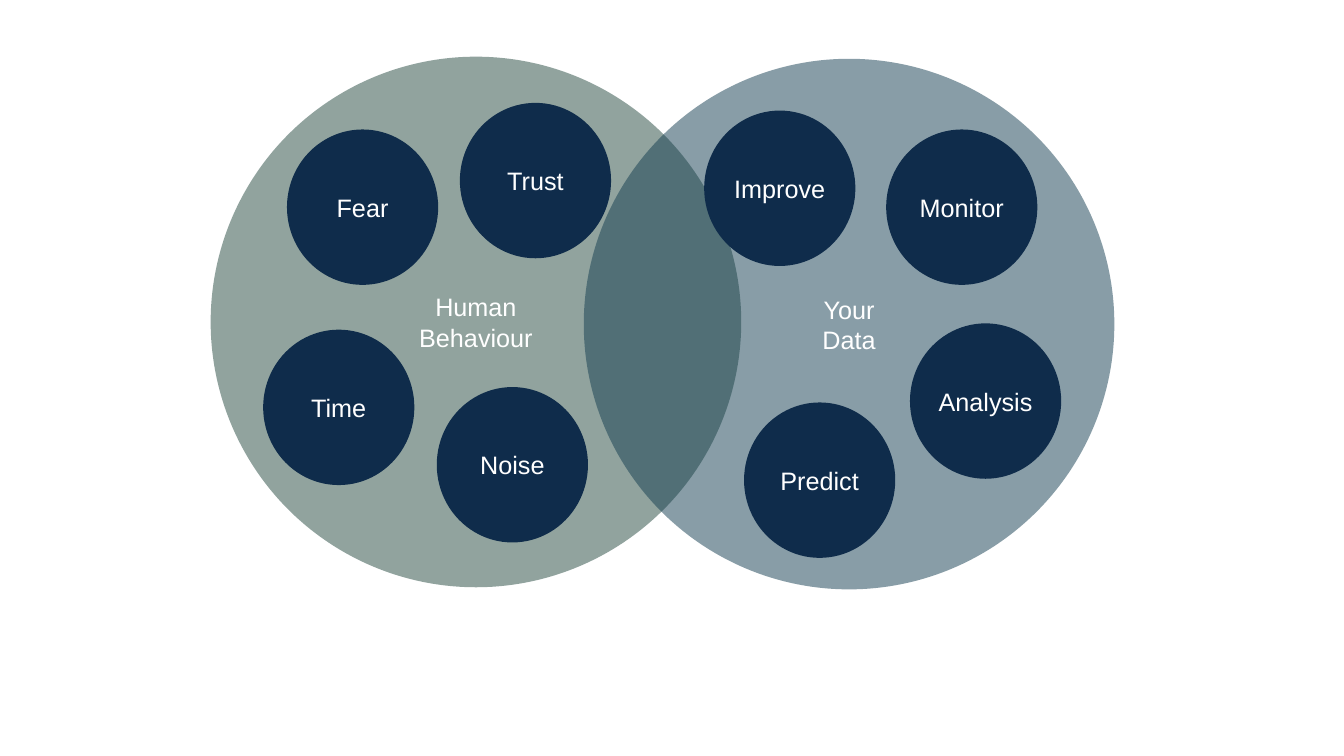
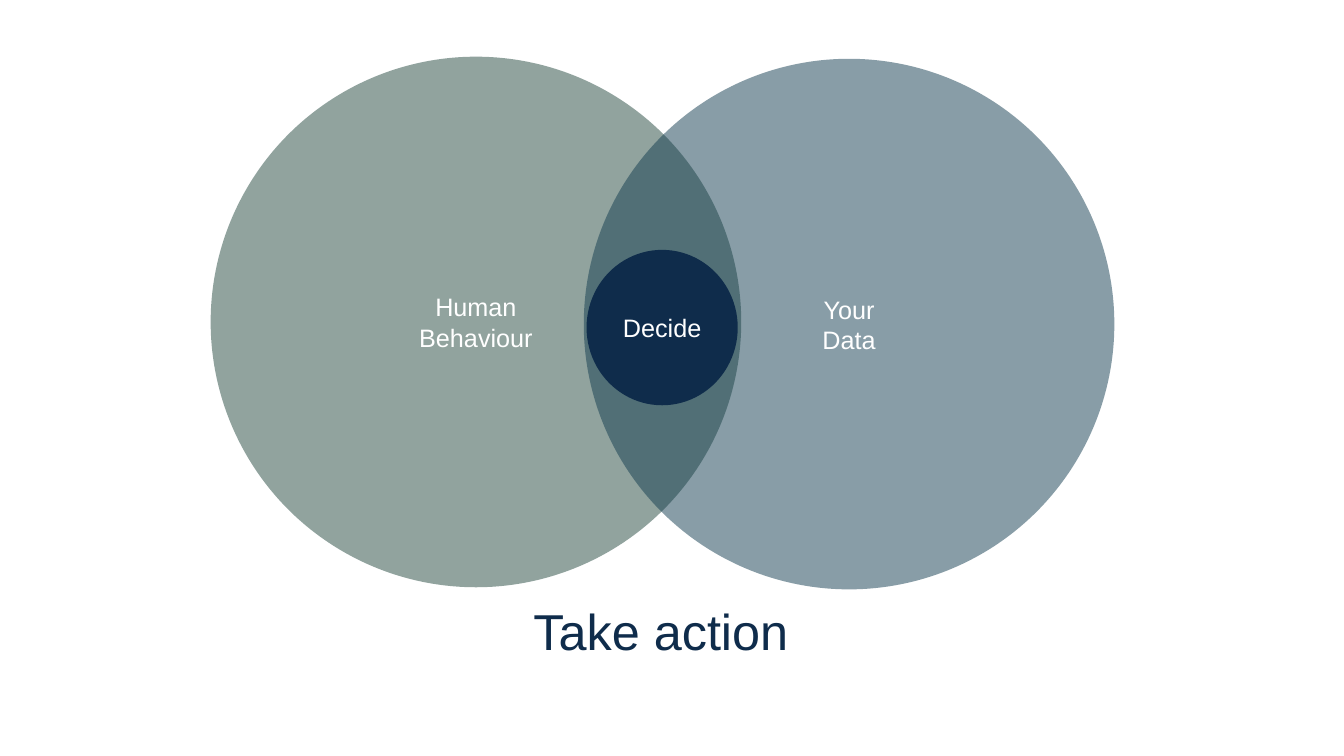
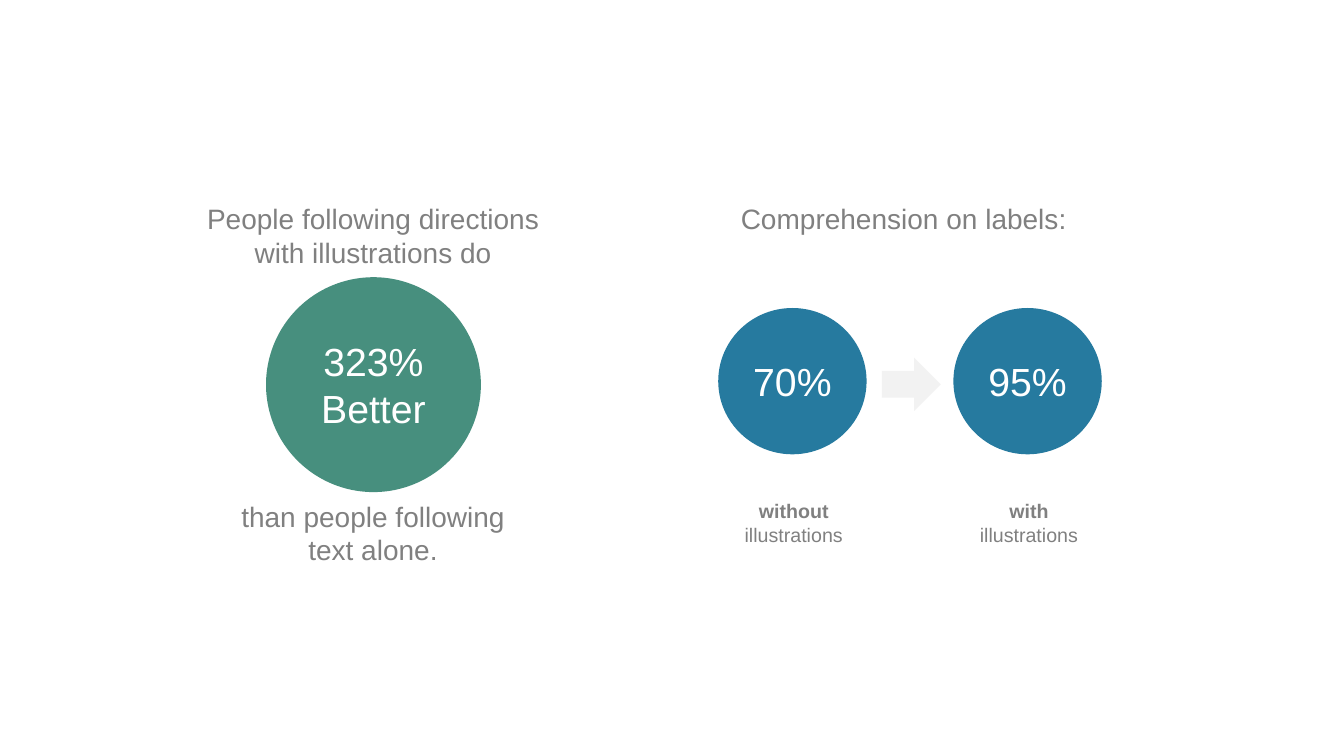
from lxml import etree
from pptx import Presentation
from pptx.dml.color import RGBColor
from pptx.enum import shapes, text
from pptx.oxml import ns
from pptx.util import Pt

WHITE = RGBColor(0xFF, 0xFF, 0xFF)
MOSS = RGBColor(0x24, 0x48, 0x3F)
SLATE = RGBColor(0x13, 0x3D, 0x50)
NAVY = RGBColor(0x0F, 0x2C, 0x4B)
GREEN = RGBColor(0x47, 0x8F, 0x7E)
BLUE = RGBColor(0x26, 0x7A, 0x9F)
GREY = RGBColor(0x80, 0x80, 0x80)
PALE = RGBColor(0xF2, 0xF2, 0xF2)

KIND = shapes.MSO_SHAPE
ALIGN = text.PP_ALIGN
ANCHOR = text.MSO_ANCHOR


class Deck:
    font = "Arial"

    def __init__(self):
        self.file = Presentation()
        self.file.slide_width, self.file.slide_height = Pt(960), Pt(540)

    def slide(self, layout=6):
        self.page = self.file.slides.add_slide(self.file.slide_layouts[layout])
        self.items = self.page.shapes

    def group(self):
        self.items = self.page.shapes.add_group_shape().shapes

    def ungroup(self):
        self.items = self.page.shapes

    def letter(self, shape, words, size, color, anchor, align=ALIGN.CENTER, bold=False):
        frame = shape.text_frame
        frame.margin_left = frame.margin_right = 0
        frame.margin_top = frame.margin_bottom = 0
        frame.word_wrap = True
        frame.auto_size = text.MSO_AUTO_SIZE.NONE
        frame.vertical_anchor = anchor
        frame.text = words
        for index, line in enumerate(frame.paragraphs):
            line.alignment = align
            line.font.name = self.font
            line.font.size = Pt(size)
            line.font.color.rgb = color
            line.font.bold = bold and index == 0
        return frame

    def shape(self, kind, box, color, alpha=100):
        item = self.items.add_shape(kind, *map(Pt, box))
        item.shadow.inherit = False
        item.line.fill.background()
        item.fill.solid()
        item.fill.fore_color.rgb = color
        if alpha < 100:
            tint = item.element.spPr.find(".//" + ns.qn("a:srgbClr"))
            etree.SubElement(tint, ns.qn("a:alpha"), val=str(alpha * 1000))
        return item

    def disc(self, words, box, color, size=18, alpha=100):
        item = self.shape(KIND.OVAL, box, color, alpha)
        self.letter(item, words, size, WHITE, ANCHOR.MIDDLE)

    def dot(self, words, left, top):
        self.disc(words, (left, top, 108, 111), NAVY)

    def label(self, words, box, size=20, bold=False):
        item = self.items.add_textbox(*map(Pt, box))
        self.letter(item, words, size, GREY, ANCHOR.TOP, bold=bold)

    def title(self, words, left, top, width, height):
        item = self.page.shapes.title
        item.left, item.top = Pt(left), Pt(top)
        item.width, item.height = Pt(width), Pt(height)
        frame = self.letter(item, words, 36, NAVY, ANCHOR.TOP, ALIGN.LEFT)
        frame.word_wrap = False

    def venn(self):
        self.disc("Human\nBehaviour", (150.5, 40.5, 379, 379), MOSS, alpha=50)
        self.disc("Your\nData", (417, 42, 379, 379), SLATE, alpha=50)


def main():
    deck = Deck()

    deck.slide()
    deck.venn()
    for words, left, top in (
        ("Noise", 312, 276.5),
        ("Time", 188, 235.5),
        ("Fear", 205, 92.5),
        ("Trust", 328.5, 73.5),
        ("Predict", 531.5, 287.5),
        ("Analysis", 650, 231),
        ("Monitor", 633, 92.5),
        ("Improve", 503, 79),
    ):
        deck.dot(words, left, top)

    deck.slide(5)
    deck.venn()
    deck.dot("Decide", 419, 178.5)
    deck.title("Take action", 381, 428.5, 184, 44)

    deck.slide()
    deck.group()
    deck.disc("323%\nBetter", (190, 198, 153.5, 153.5), GREEN, 28)
    deck.label("People following directions with illustrations do", (145, 144, 243, 48))
    deck.label("than people following text alone.", (171, 356.5, 191, 48))
    deck.ungroup()
    deck.label("Comprehension on labels:", (524, 144, 243, 24))
    for index, (rate, word) in enumerate((("70%", "without"), ("95%", "with"))):
        shift = 168 * index
        deck.disc(rate, (513 + shift, 220, 106, 104.5), BLUE, 28)
        deck.label(word + "\nillustrations", (524 + shift, 356.5, 86, 34), 14, True)
    deck.shape(KIND.RIGHT_ARROW, (630, 255.5, 42, 38), PALE)

    deck.file.save("out.pptx")


if __name__ == "__main__":
    main()
